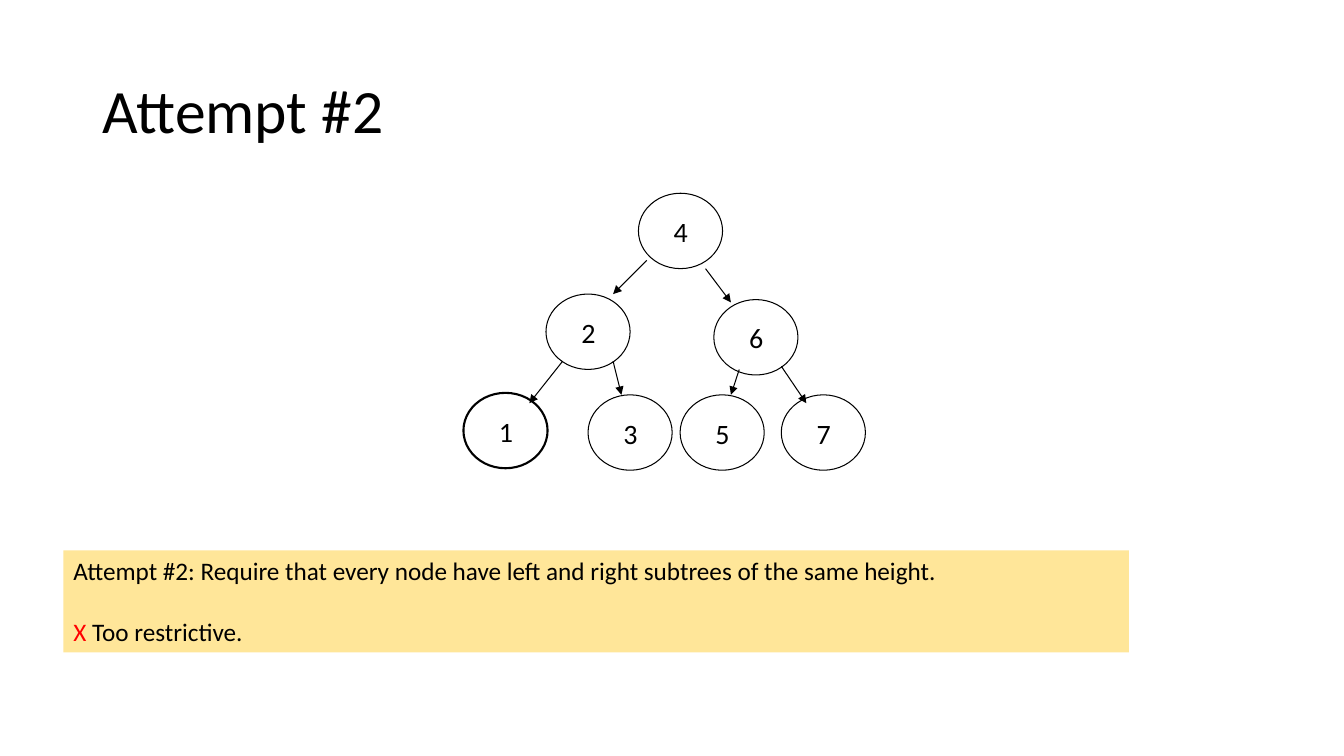
from lxml import etree
from pptx import Presentation
from pptx.dml.color import RGBColor
from pptx.enum.shapes import MSO_CONNECTOR, MSO_SHAPE
from pptx.enum.text import MSO_ANCHOR, MSO_AUTO_SIZE, PP_ALIGN
from pptx.oxml.ns import qn
from pptx.util import Cm, Pt

FONT = "Calibri"
BLACK = RGBColor(0x00, 0x00, 0x00)
RED = RGBColor(0xFF, 0x00, 0x00)
SAND = RGBColor(0xFF, 0xE6, 0x99)
OVAL, RECT = MSO_SHAPE.OVAL, MSO_SHAPE.RECTANGLE
STRAIGHT = MSO_CONNECTOR.STRAIGHT
LEFT, MIDDLE, TOP = PP_ALIGN.LEFT, MSO_ANCHOR.MIDDLE, MSO_ANCHOR.TOP
NO_FIT, GROW = MSO_AUTO_SIZE.NONE, MSO_AUTO_SIZE.SHAPE_TO_FIT_TEXT

# Tree in cm: key, left, top, line width in points
NODES = [
    ("4", 16.09, 4.87, 0.75),
    ("2", 13.76, 7.41, 0.75),
    ("6", 17.99, 7.55, 0.75),
    ("1", 11.68, 9.9, 1.5),
    ("3", 14.82, 9.95, 0.75),
    ("5", 17.14, 9.95, 0.75),
    ("7", 19.69, 9.95, 0.75),
]
# Arrows in cm: start x, start y, end x, end y
EDGES = [
    (16.3, 6.56, 15.45, 7.41),
    (17.78, 6.77, 18.42, 7.62),
    (14.18, 9.1, 13.34, 10.16),
    (15.45, 9.1, 15.66, 9.95),
    (18.63, 9.31, 18.42, 9.95),
    (19.69, 9.23, 20.32, 10.16),
]


def style(run, size, color=BLACK):
    run.font.name = FONT
    run.font.size = Pt(size)
    run.font.color.rgb = color


def add_title(slide, text):
    title = slide.shapes.title
    title.left, title.top = Cm(2.33), Cm(1.01)
    title.width, title.height = Cm(29.21), Cm(3.68)
    frame = title.text_frame
    frame.text = text
    frame.auto_size = NO_FIT
    frame.vertical_anchor = MIDDLE
    para = frame.paragraphs[0]
    para.alignment = LEFT
    para.line_spacing = 0.9
    style(para.runs[0], 44)


def add_node(slide, key, left, top, weight):
    oval = slide.shapes.add_shape(OVAL, Cm(left), Cm(top), Cm(2.12), Cm(1.9))
    oval.shadow.inherit = False
    oval.fill.background()
    oval.line.color.rgb = BLACK
    oval.line.width = Pt(weight)
    label = slide.shapes.add_textbox(
        Cm(left + 0.64), Cm(top + 0.41), Cm(0.86), Cm(1.11))
    frame = label.text_frame
    frame.text = key
    frame.word_wrap = False
    frame.auto_size = GROW
    style(frame.paragraphs[0].runs[0], 20)


def add_arrow(slide, *ends):
    arrow = slide.shapes.add_connector(STRAIGHT, *map(Cm, ends))
    arrow.line.color.rgb = BLACK
    arrow.line.width = Pt(0.75)
    props = arrow.line._get_or_add_ln()
    etree.SubElement(props, qn("a:tailEnd"), type="triangle")
    etree.SubElement(arrow._element.spPr, qn("a:effectLst"))


def add_note(slide, rule, mark, verdict):
    band = slide.shapes.add_shape(
        RECT, Cm(1.6), Cm(13.87), Cm(26.85), Cm(2.57))
    band.shadow.inherit = False
    band.fill.solid()
    band.fill.fore_color.rgb = SAND
    band.line.fill.background()
    frame = band.text_frame
    frame.word_wrap = True
    frame.auto_size = GROW
    frame.vertical_anchor = TOP
    frame.text = rule
    first = frame.paragraphs[0]
    last = frame.add_paragraph()
    last.text = mark
    last.add_run().text = verdict
    last.space_before = Pt(22)
    for para in (first, last):
        para.alignment = LEFT
        for run in para.runs:
            style(run, 18)
    last.runs[0].font.color.rgb = RED


def main():
    deck = Presentation()
    deck.slide_width, deck.slide_height = Cm(33.87), Cm(19.05)
    slide = deck.slides.add_slide(deck.slide_layouts[5])
    add_title(slide, "Attempt #2")

    # Search tree
    for node in NODES:
        add_node(slide, *node)
    for edge in EDGES:
        add_arrow(slide, *edge)

    # Rule and verdict
    add_note(
        slide,
        "Attempt #2: Require that every node have left and right "
        "subtrees of the same height.",
        "X", " Too restrictive.")
    deck.save("out.pptx")


if __name__ == "__main__":
    main()
